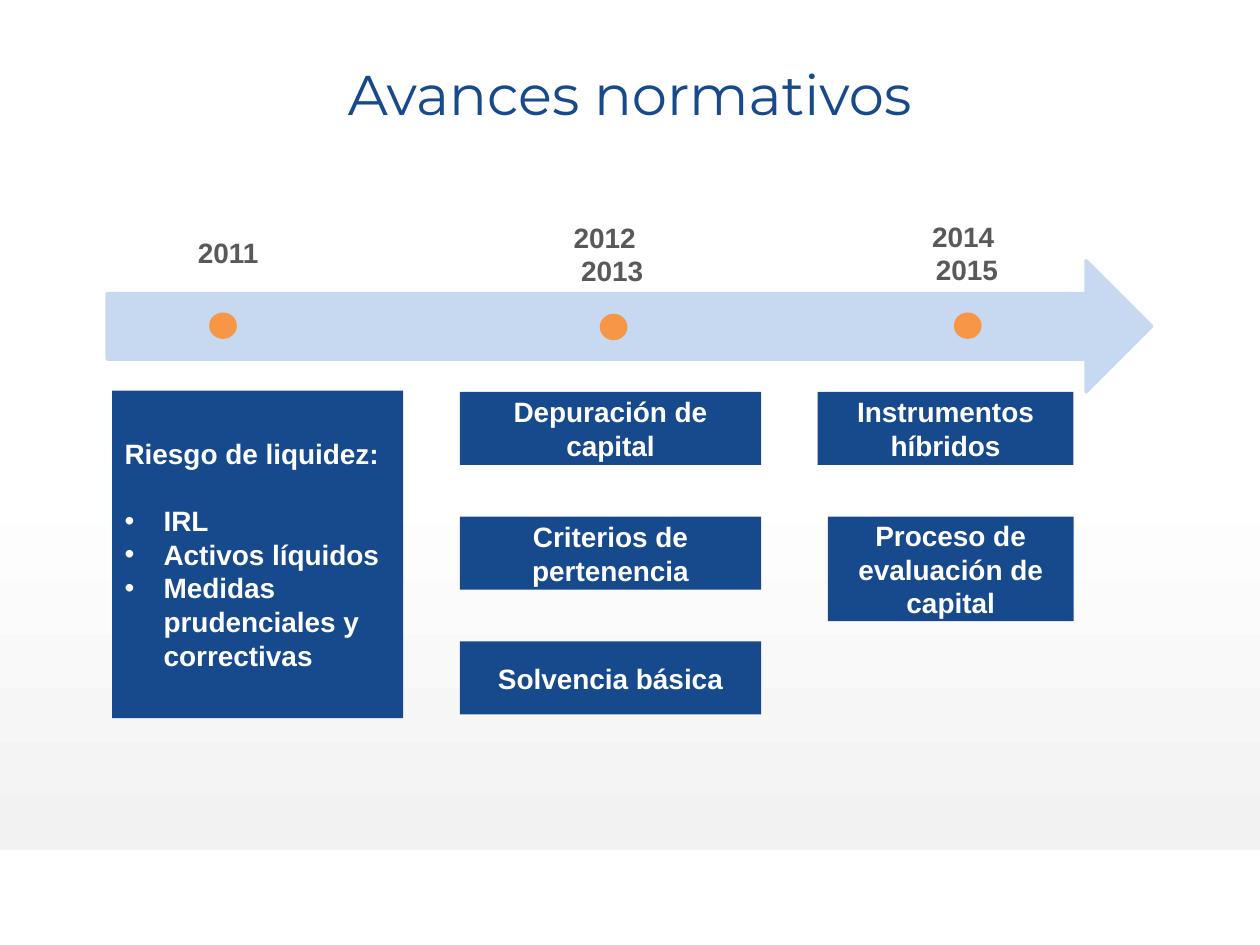
from dataclasses import dataclass
from lxml.etree import SubElement
from pptx import Presentation
from pptx.dml.color import RGBColor
from pptx.enum.shapes import MSO_SHAPE as Shape
from pptx.enum.text import MSO_ANCHOR as Anchor, MSO_AUTO_SIZE as AutoSize, PP_ALIGN as Align
from pptx.oxml.ns import qn
from pptx.util import Inches, Pt


@dataclass(frozen=True)
class Theme:
    blue: str = "17498D"
    arrow: str = "C6D9F1"
    dot: str = "F79646"
    grey: str = "595959"
    white: str = "FFFFFF"
    shade: str = "F2F2F2"
    title_font: str = "Montserrat"
    body_font: str = "Arial"
    title_size: int = 32
    body_size: int = 16


T = Theme()
W, H = 10, 7.5
TITLE = "Avances normativos"
YEARS = [
    (1.4, 1.82, 0.82, 0.37, 0, ["2011"]),
    (4.36, 1.7, 1, 0.64, 0.12, ["2012", "2013"]),
    (7.22, 1.69, 0.91, 0.64, 0.06, ["2014", "2015"]),
]
DOTS = [(1.66, 2.48), (4.76, 2.49), (7.57, 2.48)]
LIQUIDITY = "Riesgo de liquidez:"
LIQUIDITY_ITEMS = ["IRL", "Activos líquidos", "Medidas prudenciales y correctivas"]
ROW_TOP, ROW_STEP, BOX_H = 3.11, 0.99, 0.58
COLUMNS = [
    (6.04, [
        ("Depuración de capital", 2.39, BOX_H),
        ("Criterios de pertenencia", 2.39, BOX_H),
        ("Solvencia básica", 2.39, BOX_H),
    ]),
    (8.52, [
        ("Instrumentos híbridos", 2.03, BOX_H),
        ("Proceso de evaluación de capital", 1.95, 0.83),
    ]),
]


def rgb(color):
    return RGBColor.from_string(color)


def box(x, y, w, h):
    return [Inches(v) for v in (x, y, w, h)]


def add_run(p, text, color, font=T.body_font, size=T.body_size, bold=True):
    r = p.add_run()
    r.text = text
    r.font.name, r.font.size, r.font.bold = font, Pt(size), bold
    r.font.color.rgb = rgb(color)


def indent(p, left, first=0):
    pPr = p._p.get_or_add_pPr()
    pPr.set("marL", str(Inches(left)))
    pPr.set("indent", str(Inches(first)))
    return pPr


def add_shape(slide, kind, place, color):
    sp = slide.shapes.add_shape(kind, *box(*place))
    sp.shadow.inherit = False
    sp.fill.solid()
    sp.fill.fore_color.rgb = rgb(color)
    sp.line.fill.background()
    return sp


def add_card(slide, place, text, align=Align.CENTER):
    sp = add_shape(slide, Shape.ROUNDED_RECTANGLE, place, T.blue)
    sp.adjustments[0] = 0
    tf = sp.text_frame
    tf.word_wrap = True
    tf.vertical_anchor = Anchor.MIDDLE
    p = tf.paragraphs[0]
    p.alignment = align
    add_run(p, text, T.white)
    return tf


def add_background(slide):
    sp = add_shape(slide, Shape.RECTANGLE, (0, 3.74, W, 3.01), T.white)
    sp.fill.gradient()
    sp.fill.gradient_angle = 270
    for stop, color in zip(sp.fill.gradient_stops, (T.white, T.shade)):
        stop.color.rgb = rgb(color)


def add_title(slide):
    title = slide.shapes.title
    title.left, title.top, title.width, title.height = box(2.41, 0.42, 5.18, 0.64)
    tf = title.text_frame
    tf.word_wrap = False
    tf.auto_size = AutoSize.NONE
    tf.vertical_anchor = Anchor.TOP
    p = tf.paragraphs[0]
    p.alignment = Align.CENTER
    add_run(p, TITLE, T.blue, T.title_font, T.title_size, False)


def add_timeline(slide):
    arrow = add_shape(slide, Shape.RIGHT_ARROW, (0.85, 2.07, 8.29, 1.04), T.arrow)
    arrow.line.color.rgb = rgb(T.arrow)
    arrow.line.width = Pt(2)
    for x, y in DOTS:
        add_shape(slide, Shape.OVAL, (x, y, 0.22, 0.21), T.dot)
    for x, y, w, h, shift, years in YEARS:
        tf = slide.shapes.add_textbox(*box(x, y, w, h)).text_frame
        tf.word_wrap = True
        tf.margin_right = Inches(0.1 + shift)
        for i, year in enumerate(years):
            p = tf.add_paragraph() if i else tf.paragraphs[0]
            p.alignment = Align.CENTER
            indent(p, shift * i)
            add_run(p, year, T.grey)


def add_cards(slide):
    tf = add_card(slide, (0.89, 3.1, 2.31, 2.6), LIQUIDITY, Align.LEFT)
    for i, item in enumerate(LIQUIDITY_ITEMS):
        p = tf.add_paragraph()
        p.alignment = Align.LEFT
        if i == 0:
            p.space_before = Pt(19)
        pPr = indent(p, 0.31, -0.31)
        SubElement(pPr, qn("a:buFont")).set("typeface", T.body_font)
        SubElement(pPr, qn("a:buChar")).set("char", "•")
        add_run(p, item, T.white)
    for right, cards in COLUMNS:
        for row, (text, w, h) in enumerate(cards):
            add_card(slide, (right - w, ROW_TOP + row * ROW_STEP, w, h), text)


def main():
    prs = Presentation()
    prs.slide_width, prs.slide_height = Inches(W), Inches(H)
    slide = prs.slides.add_slide(prs.slide_layouts[5])
    add_background(slide)
    add_title(slide)
    add_timeline(slide)
    add_cards(slide)
    prs.save("out.pptx")


if __name__ == "__main__":
    main()
